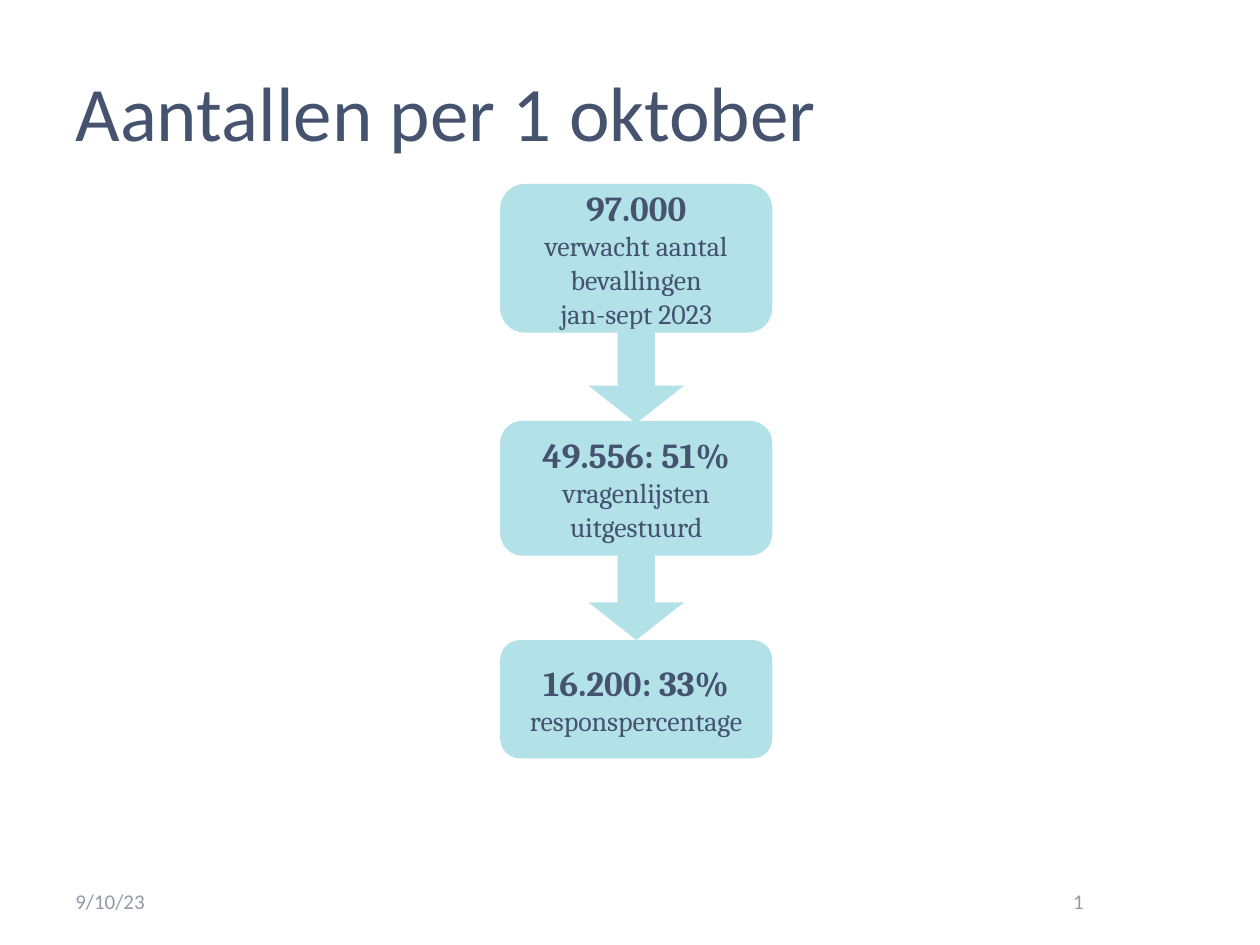
from pptx import Presentation
from pptx.dml.color import RGBColor
from pptx.enum.shapes import MSO_SHAPE
from pptx.enum.text import MSO_ANCHOR, PP_ALIGN
from pptx.util import Inches, Pt

COLORS = {"ink": "45536F", "muted": "9499A4", "aqua": "B2E2E8"}
SLIDE_WIDTH, SLIDE_HEIGHT = 10, 7.5
FLOW_CENTER = 5.05
STEP_WIDTH = 2.16
ARROW_WIDTH, ARROW_HEIGHT = 0.76, 0.75
FOOTER_TOP, FOOTER_HEIGHT = 6.95, 0.4

# top, height, lines of each step
STEPS = [
    (1.46, 1.18, ["97.000", "verwacht aantal bevallingen", "jan-sept 2023"]),
    (3.34, 1.07, ["49.556: 51%", "vragenlijsten uitgestuurd"]),
    (5.08, 0.94, ["16.200: 33%", "responspercentage"]),
]
ARROW_TOPS = [2.61, 4.33]


def style_paragraph(paragraph, font_name, size, color, align, bold=False):
    paragraph.alignment = align
    for run in paragraph.runs:
        run.font.name = font_name
        run.font.size = Pt(size)
        run.font.bold = bold
        run.font.color.rgb = RGBColor.from_string(COLORS[color])


def set_title(slide, wording):
    title = slide.shapes.title
    title.left, title.top = Inches(0.5), Inches(0.43)
    title.width, title.height = Inches(SLIDE_WIDTH - 1), Inches(1.12)
    frame = title.text_frame
    frame.text = wording
    frame.vertical_anchor = MSO_ANCHOR.TOP
    frame.margin_top = Inches(0.08)
    style_paragraph(frame.paragraphs[0], "Calibri", 44, "ink", PP_ALIGN.LEFT)


def add_flow_shape(slide, preset, top, width, height):
    """Add an aqua shape centred on the axis of the flow."""
    flow_shape = slide.shapes.add_shape(
        preset, Inches(FLOW_CENTER - width / 2), Inches(top),
        Inches(width), Inches(height))
    flow_shape.shadow.inherit = False
    flow_shape.fill.solid()
    flow_shape.fill.fore_color.rgb = RGBColor.from_string(COLORS["aqua"])
    flow_shape.line.fill.background()
    return flow_shape


def add_step(slide, top, height, lines):
    step = add_flow_shape(slide, MSO_SHAPE.ROUNDED_RECTANGLE, top,
                          STEP_WIDTH, height)
    frame = step.text_frame
    frame.word_wrap = True
    frame.vertical_anchor = MSO_ANCHOR.MIDDLE
    frame.text = "\n".join(lines)
    count, *captions = frame.paragraphs
    style_paragraph(count, "Cambria", 20, "ink", PP_ALIGN.CENTER, bold=True)
    for caption in captions:
        style_paragraph(caption, "Cambria", 16, "ink", PP_ALIGN.CENTER)


def add_arrow(slide, top):
    arrow = add_flow_shape(slide, MSO_SHAPE.DOWN_ARROW, top,
                           ARROW_WIDTH, ARROW_HEIGHT)
    arrow.adjustments[0] = 0.39
    arrow.adjustments[1] = 0.4


def add_footer(slide, wording, left, width, align):
    footer = slide.shapes.add_textbox(
        Inches(left), Inches(FOOTER_TOP), Inches(width), Inches(FOOTER_HEIGHT))
    frame = footer.text_frame
    frame.word_wrap = True
    frame.vertical_anchor = MSO_ANCHOR.MIDDLE
    frame.text = wording
    style_paragraph(frame.paragraphs[0], "Calibri", 12, "muted", align)


def main():
    deck = Presentation()
    deck.slide_width = Inches(SLIDE_WIDTH)
    deck.slide_height = Inches(SLIDE_HEIGHT)
    title_only = deck.slide_layouts[5]
    slide = deck.slides.add_slide(title_only)

    set_title(slide, "Aantallen per 1 oktober")
    add_footer(slide, "9/10/23", 0.5, 2.33, PP_ALIGN.LEFT)
    add_footer(slide, "1", 7.17, 1.53, PP_ALIGN.RIGHT)
    for top, height, lines in STEPS:
        add_step(slide, top, height, lines)
    for top in ARROW_TOPS:
        add_arrow(slide, top)

    deck.save("out.pptx")


if __name__ == "__main__":
    main()
